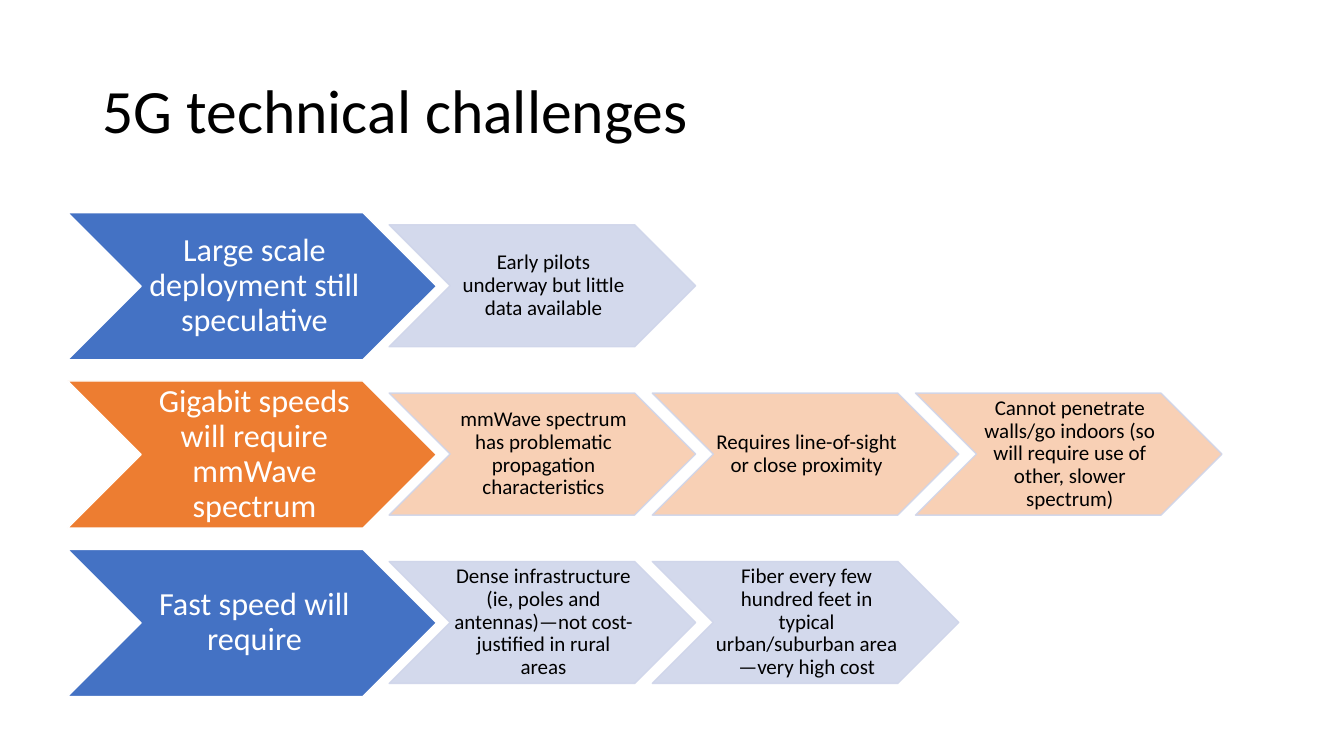
import pptx
import pptx.dml.color
import pptx.enum.shapes
import pptx.enum.text
import pptx.oxml.ns
import pptx.util
from lxml import etree

Inches = pptx.util.Inches
Pt = pptx.util.Pt
RGBColor = pptx.dml.color.RGBColor
PP_ALIGN = pptx.enum.text.PP_ALIGN

WHITE = RGBColor(0xFF, 0xFF, 0xFF)
BLACK = RGBColor(0x00, 0x00, 0x00)
BLUE = RGBColor(0x44, 0x72, 0xC4)
PALE_BLUE = RGBColor(0xCF, 0xD5, 0xEA)
ORANGE = RGBColor(0xED, 0x7D, 0x31)
PALE_ORANGE = RGBColor(0xF8, 0xCB, 0xAD)

TITLE = "5G technical challenges"
CHALLENGES = [
    ("Large scale deployment still speculative", BLUE, PALE_BLUE, [
        "Early pilots underway but little data available",
    ]),
    ("Gigabit speeds will require mmWave spectrum", ORANGE, PALE_ORANGE, [
        "mmWave spectrum has problematic propagation characteristics",
        "Requires line-of-sight or close proximity",
        "Cannot penetrate walls/go indoors (so will require use of other, slower spectrum)",
    ]),
    ("Fast speed will require", BLUE, PALE_BLUE, [
        "Dense infrastructure (ie, poles and antennas)—not cost-justified in rural areas",
        "Fiber every few hundred feet in typical urban/suburban area—very high cost",
    ]),
]

ROW_TOP, ROW_STEP = 2.11, 1.67
CHALLENGE_LEFT, CHALLENGE_WIDTH, CHALLENGE_HEIGHT = 0.67, 3.66, 1.46
DETAIL_LEFT, DETAIL_STEP, DETAIL_DROP = 3.86, 2.61, 0.12
DETAIL_WIDTH, DETAIL_HEIGHT = 3.04, 1.21


def add_text(slide, text, box, size, color=BLACK, align=PP_ALIGN.LEFT,
             insets=(0.1, 0.05, 0.1, 0.05), space_after=0):
    frame = slide.shapes.add_textbox(*map(Inches, box)).text_frame
    frame.word_wrap = True
    frame.vertical_anchor = pptx.enum.text.MSO_ANCHOR.MIDDLE
    (frame.margin_left, frame.margin_top,
     frame.margin_right, frame.margin_bottom) = map(Inches, insets)
    paragraph = frame.paragraphs[0]
    paragraph.alignment = align
    paragraph.line_spacing = 0.9
    paragraph.space_after = Pt(space_after)
    run = paragraph.add_run()
    run.text = text
    run.font.name = "Calibri"
    run.font.size = Pt(size)
    run.font.color.rgb = color


def add_chevron(slide, box, fill, outline, opacity=100):
    chevron = slide.shapes.add_shape(
        pptx.enum.shapes.MSO_SHAPE.CHEVRON, *map(Inches, box))
    chevron.shadow.inherit = False
    chevron.fill.solid()
    chevron.fill.fore_color.rgb = fill
    chevron.line.color.rgb = outline
    chevron.line.width = Pt(1)
    if opacity < 100:
        qn = pptx.oxml.ns.qn
        for color in chevron.element.spPr.iter(qn("a:srgbClr")):
            etree.SubElement(color, qn("a:alpha")).set("val", str(opacity * 1000))


def add_challenge(slide, text, top, fill):
    add_chevron(slide, (CHALLENGE_LEFT, top, CHALLENGE_WIDTH, CHALLENGE_HEIGHT),
                fill, WHITE)
    add_text(slide, text, (CHALLENGE_LEFT + 0.74, top, 2.2, CHALLENGE_HEIGHT), 23,
             color=WHITE, align=PP_ALIGN.CENTER,
             insets=(0.03, 0.02, 0, 0.02), space_after=8)


def add_detail(slide, text, left, top, fill):
    add_chevron(slide, (left, top, DETAIL_WIDTH, DETAIL_HEIGHT),
                fill, PALE_BLUE, opacity=90)
    add_text(slide, text, (left + 0.61, top, 1.82, DETAIL_HEIGHT), 15,
             align=PP_ALIGN.CENTER, insets=(0.02, 0.01, 0, 0.01), space_after=5)


def main():
    deck = pptx.Presentation()
    deck.slide_width, deck.slide_height = Inches(13.33), Inches(7.5)
    slide = deck.slides.add_slide(deck.slide_layouts[6])
    add_text(slide, TITLE, (0.92, 0.4, 11.5, 1.45), 44)
    for row, (challenge, strong, pale, details) in enumerate(CHALLENGES):
        top = ROW_TOP + row * ROW_STEP
        add_challenge(slide, challenge, top, strong)
        for column, detail in enumerate(details):
            add_detail(slide, detail, DETAIL_LEFT + column * DETAIL_STEP,
                       top + DETAIL_DROP, pale)
    deck.save("out.pptx")


if __name__ == "__main__":
    main()
